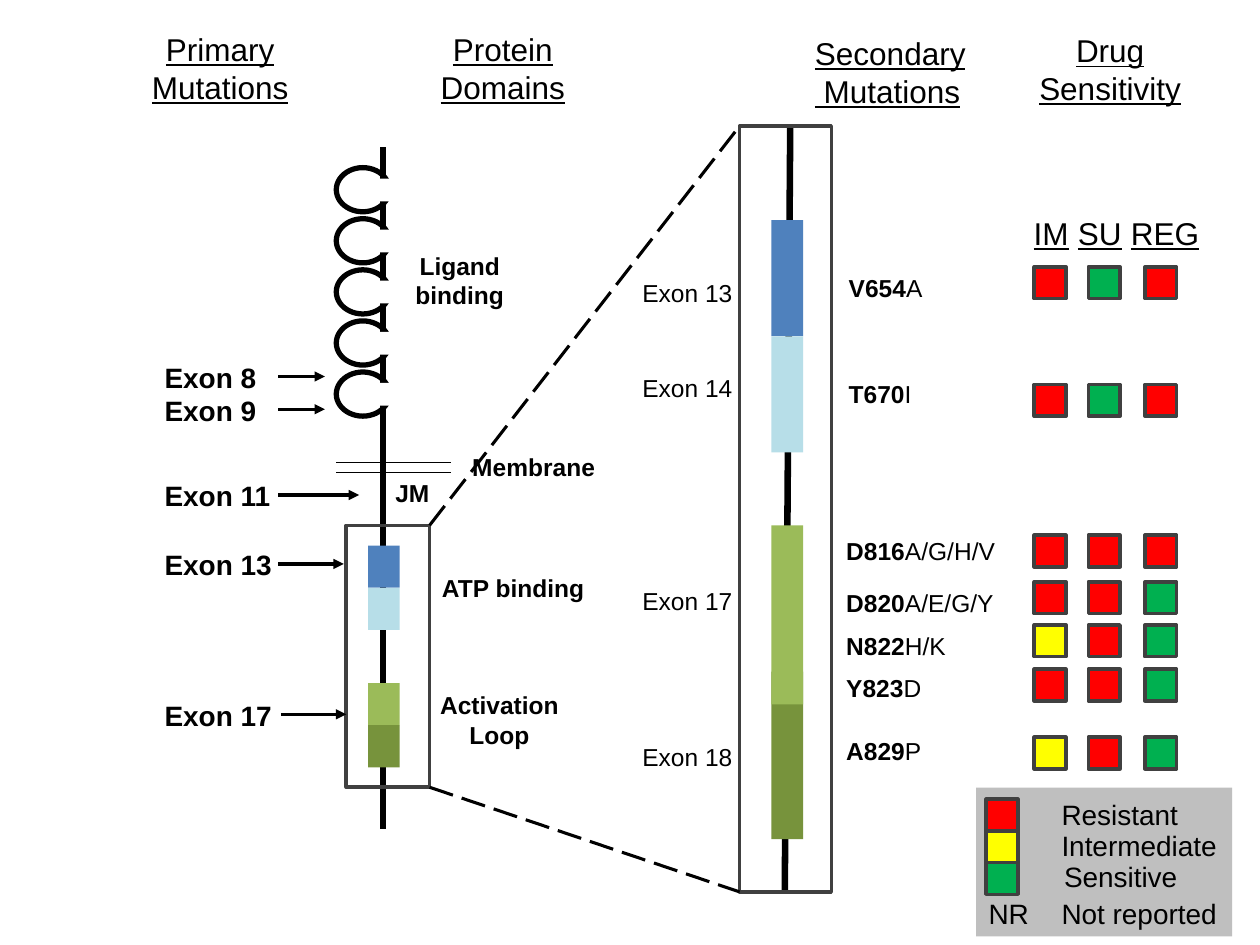
from dataclasses import dataclass

from lxml import etree
from pptx import Presentation
from pptx.dml.color import RGBColor
from pptx.enum.dml import MSO_LINE
from pptx.enum.shapes import MSO_CONNECTOR, MSO_SHAPE
from pptx.enum.text import MSO_AUTO_SIZE, PP_ALIGN
from pptx.oxml.ns import qn
from pptx.util import Cm, Pt

RECTANGLE, OVAL = MSO_SHAPE.RECTANGLE, MSO_SHAPE.OVAL
STRAIGHT = MSO_CONNECTOR.STRAIGHT
LONG_DASH = MSO_LINE.LONG_DASH
LEFT, CENTER = PP_ALIGN.LEFT, PP_ALIGN.CENTER
FIT_SHAPE = MSO_AUTO_SIZE.SHAPE_TO_FIT_TEXT


@dataclass(frozen=True)
class Theme:
    """Font, colours and type sizes of the slide."""
    font: str = "Arial"
    ink: str = "000000"
    paper: str = "FFFFFF"
    outline: str = "404040"
    panel: str = "BFBFBF"
    blue: str = "4F81BD"
    pale_blue: str = "B7DEE8"
    green: str = "9BBB59"
    dark_green: str = "77933C"
    resistant: str = "FF0000"
    intermediate: str = "FFFF00"
    sensitive: str = "00B050"
    heading: int = 18
    exon: int = 16
    label: int = 14


@dataclass(frozen=True)
class Box:
    """A region of the slide in centimetres."""
    left: float
    top: float
    width: float
    height: float

    def inner(self, left, top, width, height):
        """Return a box placed relative to this one."""
        return Box(self.left + left, self.top + top, width, height)

    def lengths(self):
        """Return the position and size as slide lengths."""
        return Cm(self.left), Cm(self.top), Cm(self.width), Cm(self.height)


THEME = Theme()
SQUARE = 0.64
STATUS = {"R": THEME.resistant, "I": THEME.intermediate, "S": THEME.sensitive}


def add_text(slide, box, *lines, size=THEME.label, bold=False, underline=False,
             align=LEFT, wrap=False, tail=""):
    """Add one paragraph per line, with an optional regular-weight tail."""
    frame = slide.shapes.add_textbox(*box.lengths()).text_frame
    frame.word_wrap = wrap
    frame.auto_size = FIT_SHAPE
    for index, line in enumerate(lines):
        paragraph = frame.paragraphs[0] if index == 0 else frame.add_paragraph()
        paragraph.alignment = align
        for words, weight in ((line, bold), (tail, False)):
            if words:
                run = paragraph.add_run()
                run.text = words
                run.font.name = THEME.font
                run.font.size = Pt(size)
                run.font.bold = weight
                run.font.underline = underline
                run.font.color.rgb = RGBColor.from_string(THEME.ink)


def add_block(slide, box, fill=None, line=None, weight=2, kind=RECTANGLE):
    """Add a preset shape with optional fill and outline."""
    shape = slide.shapes.add_shape(kind, *box.lengths())
    shape.shadow.inherit = False
    if fill:
        shape.fill.solid()
        shape.fill.fore_color.rgb = RGBColor.from_string(fill)
    else:
        shape.fill.background()
    if line:
        shape.line.color.rgb = RGBColor.from_string(line)
        shape.line.width = Pt(weight)
    else:
        shape.line.fill.background()


def add_line(slide, start, end, weight=1.75, dash=None, arrow=False):
    """Add a straight connector between two points in centimetres."""
    connector = slide.shapes.add_connector(STRAIGHT, *map(Cm, start + end))
    connector.line.color.rgb = RGBColor.from_string(THEME.ink)
    connector.line.width = Pt(weight)
    if dash:
        connector.line.dash_style = dash
    properties = connector.element.spPr
    if arrow:
        etree.SubElement(properties.find(qn("a:ln")), qn("a:tailEnd"), type="triangle")
    etree.SubElement(properties, qn("a:effectLst"))


def add_status(slide, box, left, top, status):
    """Add a coloured sensitivity square."""
    add_block(slide, box.inner(left, top, SQUARE, SQUARE), STATUS[status], THEME.outline)


def add_headings(slide, box):
    """Add the four underlined column headings."""
    for left, top, width, align, lines in (
            (2.79, 0, 3.3, CENTER, ("Primary", "Mutations")),
            (8.33, 0, 3.61, CENTER, ("Protein", "Domains")),
            (16.18, 0.08, 3.58, LEFT, ("Secondary", " Mutations")),
            (20.68, 0.03, 3.4, CENTER, ("Drug", "Sensitivity"))):
        add_text(slide, box.inner(left, top, width, box.height), *lines,
                 size=THEME.heading, underline=True, align=align)


def add_receptor(slide, box, kinase):
    """Add the receptor with its loops, membrane, domains and labels."""
    axis = box.left + 0.94
    add_line(slide, (axis, box.top), (axis, box.top + box.height), 3.75)
    for offset in (6.35, 6.55):
        level = box.top + offset
        add_line(slide, (box.left, level), (box.left + box.width, level), 0.75)
    for index in range(5):
        loop = box.inner(0, 0.41 + 1.03 * index, 1.07, 0.89)
        add_block(slide, loop, line=THEME.ink, weight=3, kind=OVAL)
        add_block(slide, loop.inner(0.69, 0.22, 0.58, 0.46), THEME.paper)
    for top, color in ((8.03, THEME.blue), (8.88, THEME.pale_blue),
                       (10.8, THEME.green), (11.65, THEME.dark_green)):
        add_block(slide, box.inner(0.64, top, SQUARE, 0.85), color)
    add_block(slide, kinase, line=THEME.outline)
    for left, top, width, words in ((2.49, 6.02, 3, "Membrane"), (0.94, 6.55, 1.19, "JM"),
                                    (1.88, 8.46, 3.4, "ATP binding")):
        add_text(slide, box.inner(left, top, width, 0.86), words, bold=True)
    for left, top, width, words in ((1.32, 1.96, 2.34, "Ligand binding"),
                                    (1.6, 10.82, 3.38, "Activation Loop")):
        add_text(slide, box.inner(left, top, width, 1.45), words,
                 bold=True, align=CENTER, wrap=True)


def add_primary_exons(slide, box):
    """Add the primary exon labels with their arrows."""
    for words, top, start, end in (("Exon 8", 0, 2.54, 3.48), ("Exon 9", 0.66, 2.54, 3.48),
                                   ("Exon 11", 2.39, 2.54, 4.17),
                                   ("Exon 13", 3.78, 2.54, 3.86),
                                   ("Exon 17", 6.81, 2.59, 3.91)):
        add_text(slide, box.inner(0, top, 2.69, 0.94), words, size=THEME.exon, bold=True)
        level = box.top + top + 0.45
        add_line(slide, (box.left + start, level), (box.left + end, level), arrow=True)


def add_kinase_detail(slide, box, kinase):
    """Add the enlarged kinase region and the dashed lines leading to it."""
    add_line(slide, (box.left + 1.02, box.top), (box.left + 0.91, box.top + box.height), 3.75)
    for top, height, color in ((1.9, 2.34, THEME.blue), (4.24, 2.34, THEME.pale_blue),
                               (11, 3.38, THEME.dark_green), (8.05, 3.61, THEME.green)):
        add_block(slide, box.inner(0.64, top, SQUARE, height), color)
    add_block(slide, box, line=THEME.outline)
    for words, top in (("Exon 13", 2.95), ("Exon 14", 4.85),
                       ("Exon 17", 9.14), ("Exon 18", 12.29)):
        add_text(slide, box.inner(-2.21, top, 2.34, 0.86), words)
    corner = kinase.left + kinase.width
    add_line(slide, (corner, kinase.top), (box.left, box.top), dash=LONG_DASH)
    add_line(slide, (corner, kinase.top + kinase.height),
             (box.left, box.top + box.height), dash=LONG_DASH)


def add_sensitivity(slide, box):
    """Add the secondary mutations and their response to each drug."""
    for words, left, width in (("IM", 3.78, 1.22), ("SU", 4.67, 1.4), ("REG", 5.74, 1.9)):
        add_text(slide, box.inner(left, 0, width, 1.02), words,
                 size=THEME.heading, underline=True)
    for codon, change, left, width, text_top, square_top, statuses in (
            ("V654", "A", 0.05, 2.01, 1.19, 1.19, "RSR"),
            ("T670", "I", 0.05, 1.78, 3.33, 3.56, "RSR"),
            ("D816", "A/G/H/V", 0, 3.53, 6.5, 6.6, "RRR"),
            ("D820", "A/E/G/Y", 0, 3.51, 7.54, 7.54, "RRS"),
            ("N822", "H/K", 0, 2.54, 8.41, 8.41, "IRS"),
            ("Y823", "D", 0, 2.03, 9.25, 9.3, "RRS"),
            ("A829", "P", 0, 2.03, 10.52, 10.67, "IRS")):
        add_text(slide, box.inner(left, text_top, width, 0.86), codon, bold=True, tail=change)
        for column, status in zip((4.04, 5.13, 6.27), statuses):
            add_status(slide, box, column, square_top, status)


def add_legend(slide, box):
    """Add the colour key."""
    add_block(slide, box, THEME.panel)
    for index, status in enumerate("RIS"):
        add_status(slide, box, 0.2, 0.23 + SQUARE * index, status)
    for words, left, top, width in (("Resistant", 1.47, 0.08, 2.9),
                                    ("Intermediate", 1.47, 0.69, 3.68),
                                    ("Sensitive", 1.52, 1.32, 2.82), ("NR", 0, 2.06, 1.32),
                                    ("Not reported", 1.47, 2.06, 3.68)):
        add_text(slide, box.inner(left, top, width, 0.94), words, size=THEME.exon)


def main():
    """Build and save the slide."""
    presentation = Presentation()
    presentation.slide_width, presentation.slide_height = Cm(25.4), Cm(19.05)
    slide = presentation.slides.add_slide(presentation.slide_layouts[6])
    receptor = Box(6.78, 2.97, 2.32, 13.74)
    kinase = receptor.inner(0.2, 7.62, 1.68, 5.28)
    add_headings(slide, Box(0, 0.48, 25.4, 1.8))
    add_receptor(slide, receptor, kinase)
    add_primary_exons(slide, Box(3.07, 7.14, 4.17, 7.75))
    add_kinase_detail(slide, Box(14.91, 2.54, 1.85, 15.44), kinase)
    add_sensitivity(slide, Box(16.81, 4.19, 7.64, 11.38))
    add_legend(slide, Box(19.68, 15.88, 5.16, 3))
    presentation.save("out.pptx")


if __name__ == "__main__":
    main()
